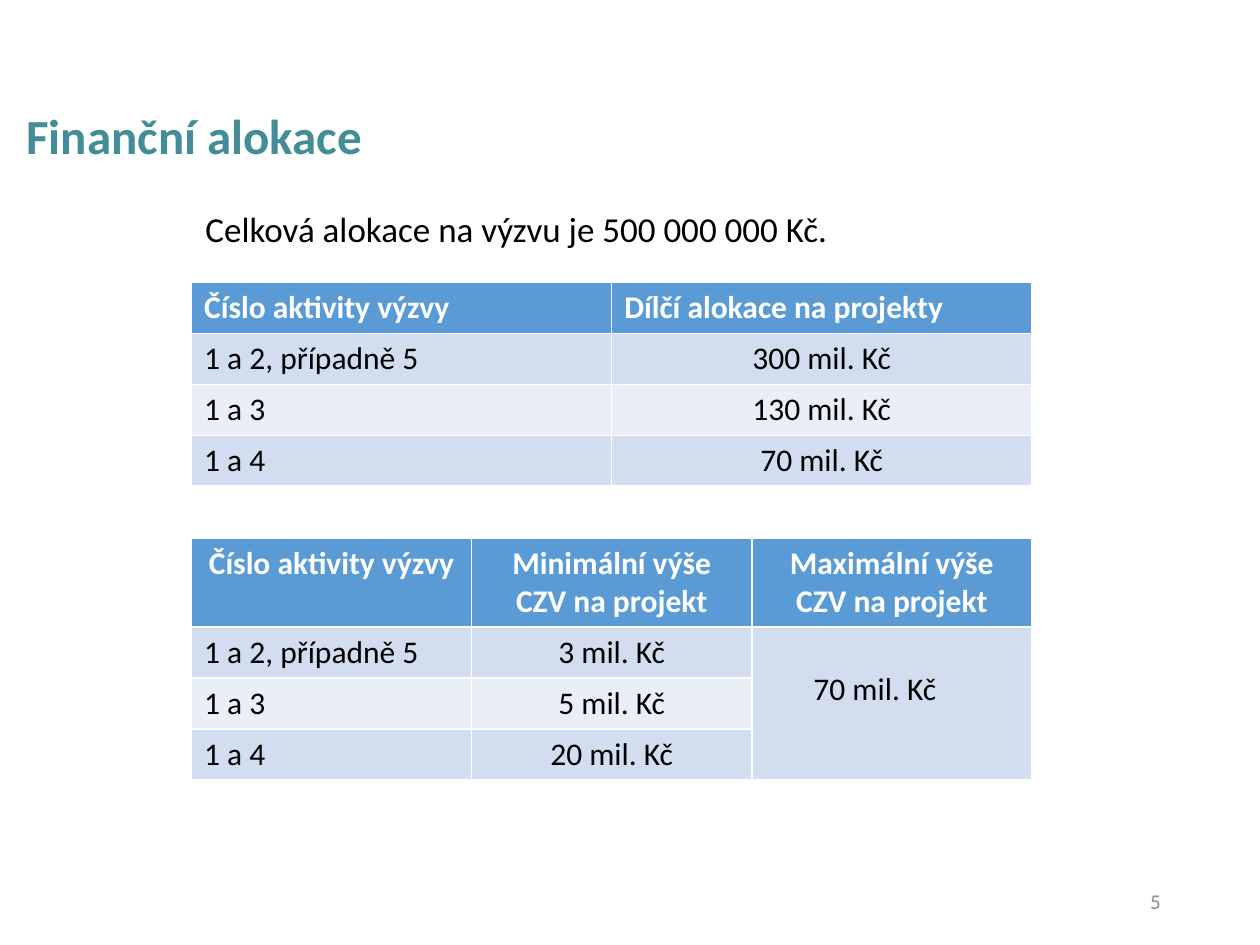
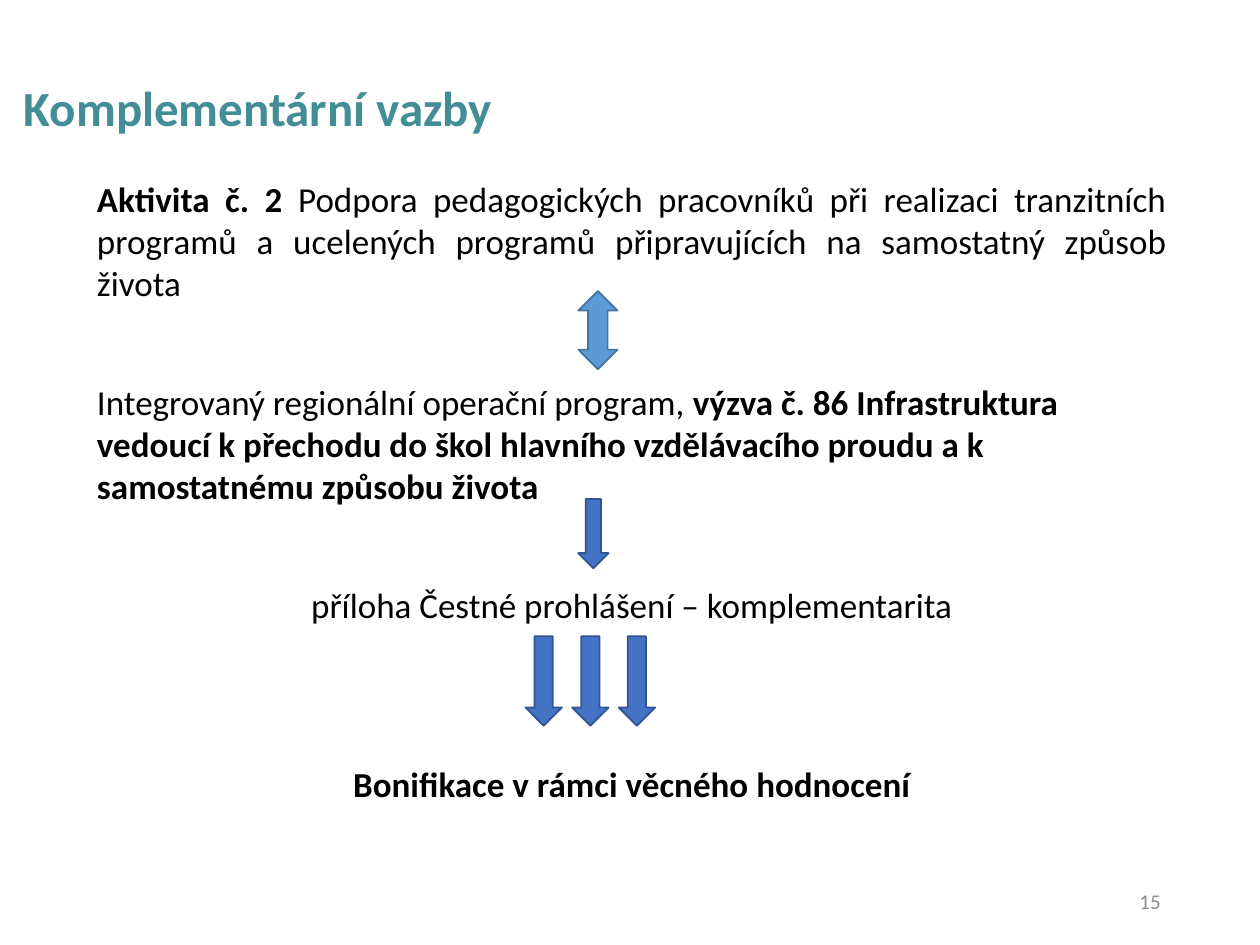
import pptx
import pptx.util
import pptx.dml.color
import pptx.enum.shapes
import pptx.enum.text

Inches = pptx.util.Inches
Pt = pptx.util.Pt
ALIGN = pptx.enum.text.PP_ALIGN
ANCHOR = pptx.enum.text.MSO_ANCHOR
SHAPE = pptx.enum.shapes.MSO_SHAPE

TEAL, BLACK, WHITE, GREY = "428D96", "000000", "FFFFFF", "8C8C8C"
HEADER, BAND_DARK, BAND_LIGHT = "5B9BD5", "D2DEEF", "EAEFF7"
INSET = Inches(0.06)


def rgb(color):
    return pptx.dml.color.RGBColor.from_string(color)


def write(p, text, size=20, color=BLACK, bold=False, align=ALIGN.LEFT, before=0):
    p.alignment = align
    p.space_before = Pt(before)
    r = p.add_run()
    r.text = text
    r.font.name = "Calibri"
    r.font.size = Pt(size)
    r.font.bold = bold
    r.font.color.rgb = rgb(color)


prs = pptx.Presentation()
prs.slide_width = Inches(10)
prs.slide_height = Inches(7.5)

pages = [
    ("Finanční alokace", "5", (0.15, 0.61, 9.59, 0.98), ANCHOR.MIDDLE, (0.69, 1.59, 9.05, 5.01)),
    ("Komplementární vazby", "15", (0.13, 0.61, 9.7, 0.98), ANCHOR.TOP, (0.71, 1.35, 8.61, 5.2)),
]
slides, bodies = [], []
for title, number, title_at, anchor, body_at in pages:
    s = prs.slides.add_slide(prs.slide_layouts[5])
    sp = s.shapes.title
    sp.left, sp.top, sp.width, sp.height = [Inches(v) for v in title_at]
    body = s.shapes.add_textbox(*[Inches(v) for v in body_at])
    for tf in (sp.text_frame, body.text_frame):
        tf.word_wrap = True
        tf.auto_size = pptx.enum.text.MSO_AUTO_SIZE.NONE
        tf.margin_left = tf.margin_right = tf.margin_top = tf.margin_bottom = INSET
    sp.text_frame.vertical_anchor = anchor
    p = sp.text_frame.paragraphs[0]
    p.line_spacing = 0.9
    write(p, title, size=28, color=TEAL, bold=True)

    tf = s.shapes.add_textbox(Inches(7.06), Inches(6.95), Inches(2.25), Inches(0.4)).text_frame
    tf.word_wrap = True
    tf.vertical_anchor = ANCHOR.MIDDLE
    write(tf.paragraphs[0], number, size=12, color=GREY, align=ALIGN.RIGHT)
    slides.append(s)
    bodies.append(body.text_frame)

s, tf = slides[0], bodies[0]
tf.margin_left = Inches(0.94)
write(tf.paragraphs[0], "Celková alokace na výzvu je 500 000 000 Kč.")

row_height = Inches(1.62 / 4)
tables = [
    (2.24, 1.62, ALIGN.LEFT, [
        ["Číslo aktivity výzvy", "Dílčí alokace na projekty"],
        ["1 a 2, případně 5", "300 mil. Kč"],
        ["1 a 3", "130 mil. Kč"],
        ["1 a 4", "70 mil. Kč"],
    ]),
    (4.27, 1.92, ALIGN.CENTER, [
        ["Číslo aktivity výzvy", "Minimální výše CZV na projekt", "Maximální výše CZV na projekt"],
        ["1 a 2, případně 5", "3 mil. Kč", ""],
        ["1 a 3", "5 mil. Kč", ""],
        ["1 a 4", "20 mil. Kč", ""],
    ]),
]
for top, height, header_align, rows in tables:
    table = s.shapes.add_table(len(rows), len(rows[0]), Inches(1.52), Inches(top),
                               Inches(6.67), Inches(height)).table
    for i, row in enumerate(rows):
        table.rows[i].height = row_height if i else Inches(height) - 3 * row_height
        for j, text in enumerate(row):
            cell = table.cell(i, j)
            cell.fill.solid()
            cell.fill.fore_color.rgb = rgb(HEADER if i == 0 else BAND_DARK if i % 2 else BAND_LIGHT)
            if text:
                align = header_align if i == 0 else ALIGN.CENTER if j else ALIGN.LEFT
                write(cell.text_frame.paragraphs[0], text, size=18, bold=i == 0,
                      color=BLACK if i else WHITE, align=align)

maximum = table.cell(1, 2)
maximum.merge(table.cell(3, 2))
maximum.margin_left = Inches(0.49)
maximum.margin_top = Inches(0.35)
write(maximum.text_frame.paragraphs[0], "70 mil. Kč", size=18)

s, tf = slides[1], bodies[1]
paragraphs = [
    (ALIGN.JUSTIFY, 0, [
        ("Aktivita č. 2 ", True),
        ("Podpora pedagogických pracovníků při realizaci tranzitních programů a ucelených "
         "programů připravujících na samostatný způsob života", False),
    ]),
    (ALIGN.LEFT, 44, [
        ("Integrovaný regionální operační program, ", False),
        ("výzva č. 86 Infrastruktura vedoucí k přechodu do škol hlavního vzdělávacího proudu "
         "a k samostatnému způsobu života", True),
    ]),
    (ALIGN.CENTER, 44, [("příloha Čestné prohlášení – komplementarita", False)]),
    (ALIGN.CENTER, 78, [("Bonifikace v rámci věcného hodnocení", True)]),
]
for i, (align, before, runs) in enumerate(paragraphs):
    p = tf.add_paragraph() if i else tf.paragraphs[0]
    for text, bold in runs:
        write(p, text, bold=bold, align=align, before=before)

arrows = [
    (SHAPE.UP_DOWN_ARROW, 4.59, 2.31, 0.31, 0.62, "5B9BD5", "43739E"),
    (SHAPE.DOWN_ARROW, 4.59, 3.96, 0.24, 0.55, "4472C4", "325491"),
]
for i in range(3):
    arrows.append((SHAPE.DOWN_ARROW, 4.17 + 0.37 * i, 5.05, 0.29, 0.71, "4472C4", "325491"))
for kind, left, top, width, height, fill, line in arrows:
    sp = s.shapes.add_shape(kind, Inches(left), Inches(top), Inches(width), Inches(height))
    sp.shadow.inherit = False
    sp.fill.solid()
    sp.fill.fore_color.rgb = rgb(fill)
    sp.line.color.rgb = rgb(line)
    sp.line.width = Pt(1)

prs.save("out.pptx")
